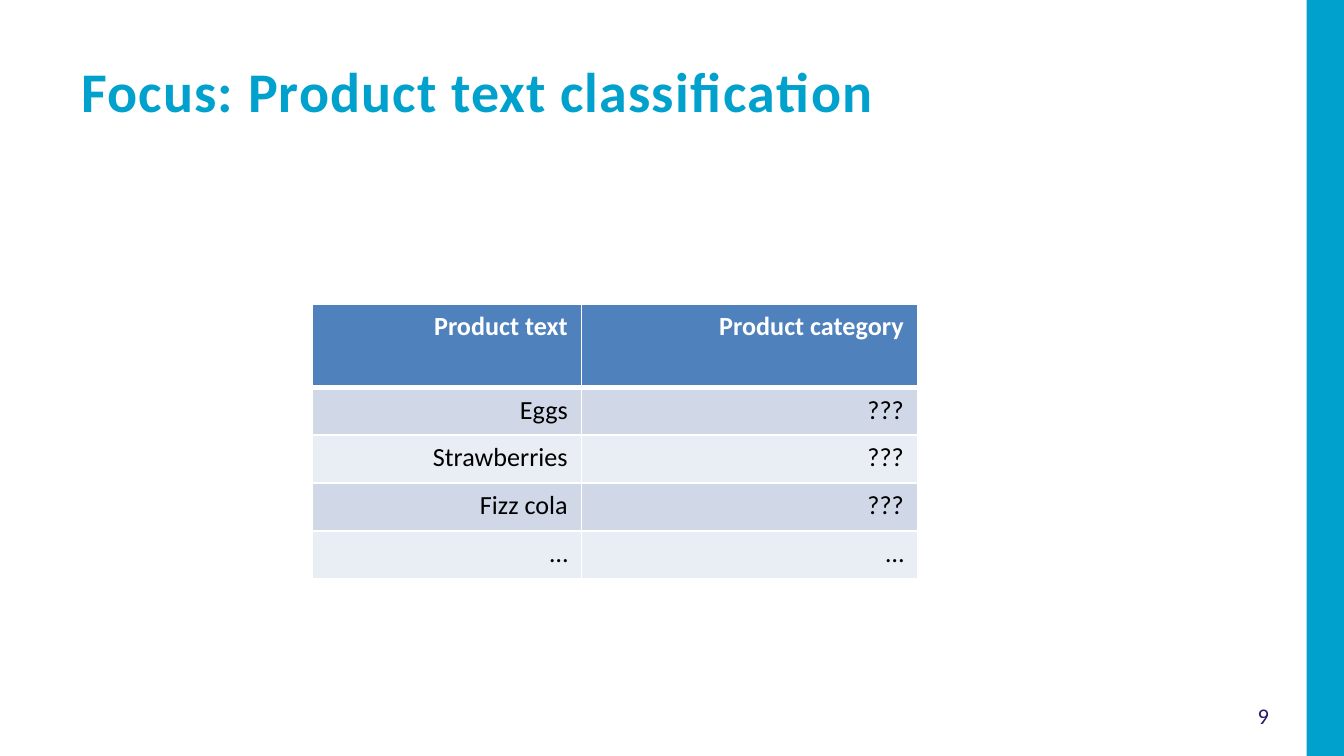
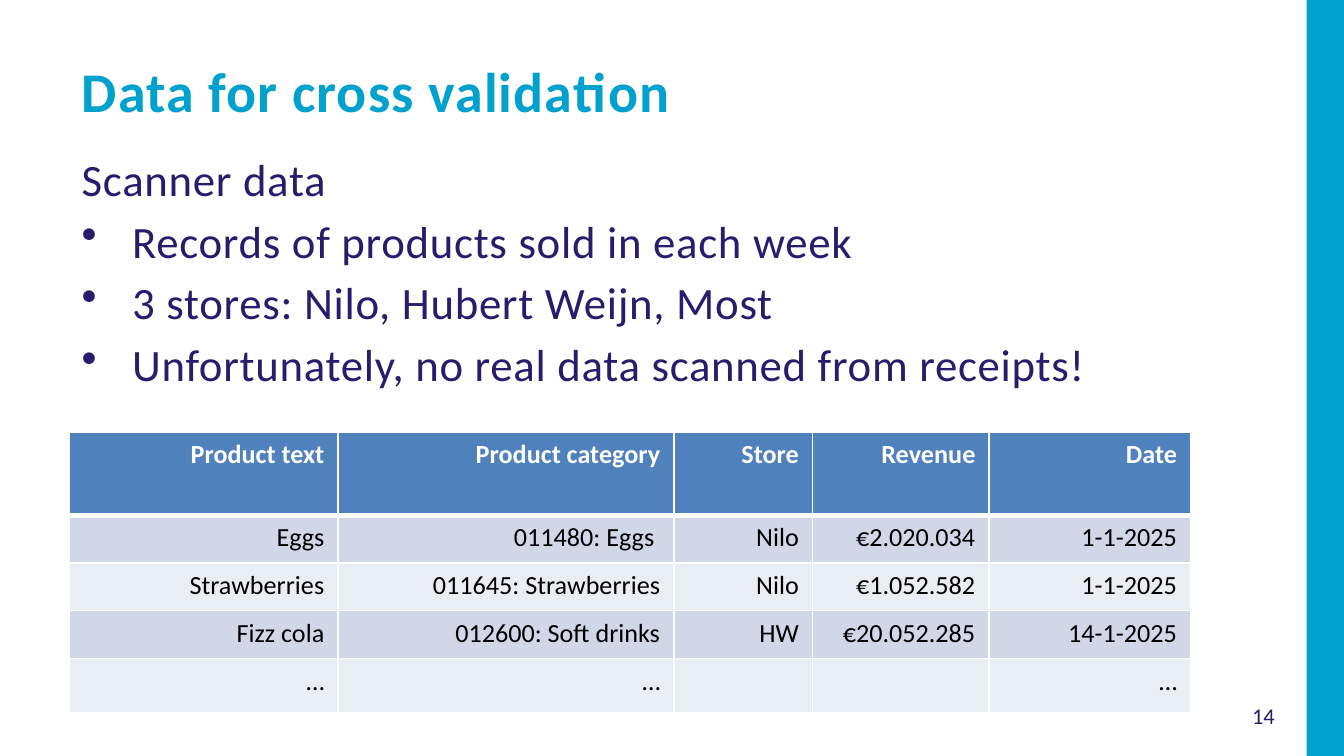
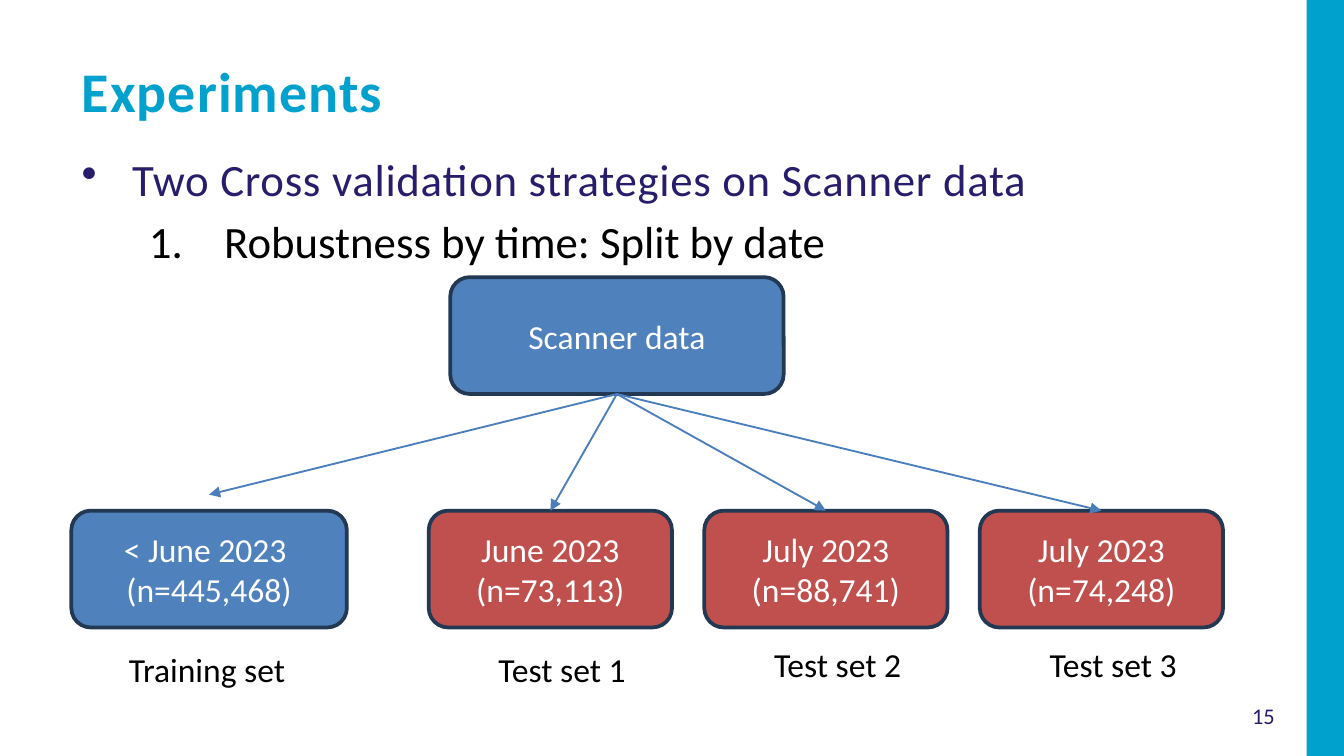
from dataclasses import dataclass
from typing import Any, NamedTuple

from lxml import etree
from pptx import Presentation, slide as sl, util as u
from pptx.dml import color
from pptx.enum import shapes, text
from pptx.oxml import ns
from pptx.shapes import autoshape
from pptx.text import text as tx

FONT = "Calibri"
CYAN, NAVY, BLUE, RED = "00A1CD", "271D6C", "4F81BD", "C0504D"
WHITE, BLACK, OUTLINE, ARROW = "FFFFFF", "000000", "233953", "4B7EBC"
ROW_FILLS = ("D0D8E8", "E9EDF4")
CENTER, LEFT, RIGHT = text.PP_ALIGN.CENTER, text.PP_ALIGN.LEFT, text.PP_ALIGN.RIGHT
MIDDLE, TOP = text.MSO_ANCHOR.MIDDLE, text.MSO_ANCHOR.TOP
SLIDE_WIDTH, SLIDE_HEIGHT = 720, 405
HEADER_HEIGHT, ROW_HEIGHT = 44.6, 25.6


class Area(NamedTuple):
    left: float
    top: float
    width: float
    height: float

    def lengths(self) -> list[u.Length]:
        return [u.Pt(value) for value in self]


class Style(NamedTuple):
    size: float
    colour: str
    bold: bool = False
    spacing: float = 0


class Bullet(NamedTuple):
    tag: str
    attributes: dict[str, str]
    margin: float
    indent: float
    level: int = 0


@dataclass
class Line:
    words: str
    style: Style
    bullet: Bullet | None = None


@dataclass
class Node:
    words: str
    area: Area
    fill: str


@dataclass
class Label:
    words: str
    area: Area


TITLE = Style(30, CYAN, True, 0.6)
BODY = Style(24, NAVY, False, 0.4)
SUBPOINT = Style(24, BLACK)
PAGE_NUMBER = Style(12, NAVY)
HEADER_CELL = Style(14, WHITE, True)
BODY_CELL = Style(14, BLACK)
NODE_TEXT = Style(18, WHITE)
LABEL_TEXT = Style(18, BLACK)

DOT = Bullet("a:buChar", {"char": "•"}, 27, -27)
NUMBER = Bullet("a:buAutoNum", {"type": "arabicPeriod"}, 76.3, -40.3, 1)

TITLE_AREA = Area(36.7, 26.6, 601, 39.6)
BODY_AREA = Area(36.7, 77.8, 601, 289.4)
NUMBER_AREA = Area(653.8, 370.8, 46, 25.2)
BAND_AREA = Area(700, 0, 20, SLIDE_HEIGHT)


def rgb(hex_colour: str) -> color.RGBColor:
    return color.RGBColor.from_string(hex_colour)


def apply(target: Any, **values: Any) -> None:
    for name, value in values.items():
        setattr(target, name, value)


def add_element(parent: Any, tag: str, **attributes: str) -> Any:
    return etree.SubElement(parent, ns.qn(tag), attributes)


def set_fill(target: Any, hex_colour: str) -> None:
    target.fill.solid()
    target.fill.fore_color.rgb = rgb(hex_colour)


def add_run(paragraph: tx._Paragraph, words: str, style: Style) -> None:
    run = paragraph.add_run()
    run.text = words
    apply(run.font, name=FONT, size=u.Pt(style.size), bold=style.bold)
    run.font.color.rgb = rgb(style.colour)
    if style.spacing:
        run._r.get_or_add_rPr().set("spc", str(round(style.spacing * 100)))


def set_bullet(paragraph: tx._Paragraph, bullet: Bullet) -> None:
    paragraph.level = bullet.level
    properties = paragraph._p.get_or_add_pPr()
    properties.set("marL", str(u.Pt(bullet.margin)))
    properties.set("indent", str(u.Pt(bullet.indent)))
    add_element(properties, bullet.tag, **bullet.attributes)


def write_lines(frame: tx.TextFrame, lines: list[Line], align: Any = LEFT) -> None:
    for index, line in enumerate(lines):
        paragraph = frame.add_paragraph() if index else frame.paragraphs[0]
        paragraph.alignment = align
        if index and align == LEFT:
            paragraph.space_before = u.Pt(4.2)
        if line.bullet:
            set_bullet(paragraph, line.bullet)
        for part, words in enumerate(line.words.split("\v")):
            if part:
                paragraph.add_line_break()
            add_run(paragraph, words, line.style)


def add_text(slide: sl.Slide, area: Area, lines: list[Line], align: Any = LEFT,
             **frame_values: Any) -> None:
    frame = slide.shapes.add_textbox(*area.lengths()).text_frame
    apply(frame, **{"word_wrap": True, "vertical_anchor": TOP, **frame_values})
    write_lines(frame, lines, align)


def add_slide(presentation: Any, title: str, number: int) -> sl.Slide:
    slide = presentation.slides.add_slide(presentation.slide_layouts[6])
    band = slide.shapes.add_shape(shapes.MSO_SHAPE.RECTANGLE, *BAND_AREA.lengths())
    band.shadow.inherit = False
    set_fill(band, CYAN)
    band.line.fill.background()
    add_text(slide, NUMBER_AREA, [Line(str(number), PAGE_NUMBER)], CENTER,
             vertical_anchor=MIDDLE)
    add_text(slide, TITLE_AREA, [Line(title, TITLE)])
    return slide


def set_borders(cell: Any, top: float, bottom: float) -> None:
    properties = cell._tc.get_or_add_tcPr()
    for side, width in {"L": 1, "R": 1, "T": top, "B": bottom}.items():
        border = add_element(properties, f"a:ln{side}", w=str(u.Pt(width)))
        add_element(add_element(border, "a:solidFill"), "a:srgbClr", val=WHITE)


def add_product_table(slide: sl.Slide, left: float, top: float,
                      widths: list[float], rows: list[list[str]]) -> None:
    heights = [HEADER_HEIGHT] + [ROW_HEIGHT] * (len(rows) - 1)
    area = Area(left, top, sum(widths), sum(heights))
    table = slide.shapes.add_table(len(rows), len(widths), *area.lengths()).table
    table.horz_banding = False
    for column, width in zip(table.columns, widths):
        column.width = u.Pt(width)
    for index, (row, height) in enumerate(zip(table.rows, heights)):
        row.height = u.Pt(height)
        for cell, words in zip(row.cells, rows[index]):
            set_borders(cell, 3 if index == 1 else 1, 1 if index else 3)
            set_fill(cell, ROW_FILLS[(index - 1) % 2] if index else BLUE)
            style = BODY_CELL if index else HEADER_CELL
            write_lines(cell.text_frame, [Line(words, style)], RIGHT)


def add_node(slide: sl.Slide, node: Node) -> autoshape.Shape:
    shape = slide.shapes.add_shape(shapes.MSO_SHAPE.ROUNDED_RECTANGLE,
                                   *node.area.lengths())
    shape.shadow.inherit = False
    set_fill(shape, node.fill)
    shape.line.color.rgb = rgb(OUTLINE)
    shape.line.width = u.Pt(2)
    apply(shape.text_frame, word_wrap=True, vertical_anchor=MIDDLE)
    lines = [Line(words, NODE_TEXT) for words in node.words.split("\n")]
    write_lines(shape.text_frame, lines, CENTER)
    return shape


def add_arrow(slide: sl.Slide, source: autoshape.Shape, target: autoshape.Shape,
              gap: float = 0) -> None:
    connector = slide.shapes.add_connector(
        shapes.MSO_CONNECTOR.STRAIGHT,
        source.left + source.width // 2, source.top + source.height,
        target.left + target.width // 2, target.top - u.Pt(gap))
    connector.begin_connect(source, 2)
    if not gap:
        connector.end_connect(target, 0)
    connector.line.color.rgb = rgb(ARROW)
    connector.line.width = u.Pt(1)
    properties = connector.element.spPr
    add_element(properties.find(ns.qn("a:ln")), "a:tailEnd", type="triangle")
    add_element(properties, "a:effectLst")


def build_focus(presentation: Any) -> None:
    slide = add_slide(presentation, "Focus: Product text classification", 9)
    add_product_table(slide, 167.4, 163, [144, 180], [
        ["Product text", "Product category"],
        ["Eggs", "???"],
        ["Strawberries", "???"],
        ["Fizz cola", "???"],
        ["…", "…"],
    ])


def build_data(presentation: Any) -> None:
    slide = add_slide(presentation, "Data for cross validation", 14)
    add_text(slide, BODY_AREA, [
        Line("Scanner data", BODY),
        Line("Records of products sold in each week", BODY, DOT),
        Line("3 stores: Nilo, Hubert Weijn, Most", BODY, DOT),
        Line("Unfortunately, no real data scanned from receipts!", BODY, DOT),
    ])
    add_product_table(slide, 37, 231.4, [144, 180, 74.2, 94.6, 108], [
        ["Product text", "Product category", "Store", "Revenue", "Date"],
        ["Eggs", "011480: Eggs ", "Nilo", "€2.020.034", "1-1-2025"],
        ["Strawberries", "011645: Strawberries", "Nilo", "€1.052.582", "1-1-2025"],
        ["Fizz cola", "012600: Soft drinks", "HW", "€20.052.285", "14-1-2025"],
        ["…", "…", "", "", "…"],
    ])


def build_experiments(presentation: Any) -> None:
    slide = add_slide(presentation, "Experiments", 15)
    add_text(slide, BODY_AREA, [
        Line("Two Cross validation strategies on Scanner data", BODY, DOT),
        Line("Robustness by time: Split by date", SUBPOINT, NUMBER),
    ])
    node_top, node_height = 273.6, 62.6
    test_left, test_pitch, test_width = 229.7, 147.6, 130.3
    test_words = ("June 2023\v(n=73,113)", "July 2023\n(n=88,741)",
                  "July 2023\n(n=74,248)")
    source = add_node(slide, Node("Scanner data",
                                  Area(241.2, 148.5, 178.6, node_height), BLUE))
    training = add_node(slide, Node("< June 2023 \v(n=445,468)",
                                    Area(38.2, node_top, 147.6, node_height), BLUE))
    tests = [
        add_node(slide, Node(words, Area(test_left + index * test_pitch, node_top,
                                         test_width, node_height), RED))
        for index, words in enumerate(test_words)
    ]
    add_arrow(slide, source, training, 8.6)
    for test in tests:
        add_arrow(slide, source, test)
    labels = [Label("Training set", Area(61.9, 344.2, 99.4, 28.8))]
    labels += [
        Label(f"Test set {index + 1}",
              Area(260 + index * test_pitch, top, 83.5, 28.8))
        for index, top in enumerate((344.2, 341.3, 341.3))
    ]
    for label in labels:
        add_text(slide, label.area, [Line(label.words, LABEL_TEXT)],
                 word_wrap=False, auto_size=text.MSO_AUTO_SIZE.SHAPE_TO_FIT_TEXT)


def main() -> None:
    presentation = Presentation()
    apply(presentation, slide_width=u.Pt(SLIDE_WIDTH),
          slide_height=u.Pt(SLIDE_HEIGHT))
    for build in (build_focus, build_data, build_experiments):
        build(presentation)
    presentation.save("out.pptx")


if __name__ == "__main__":
    main()
